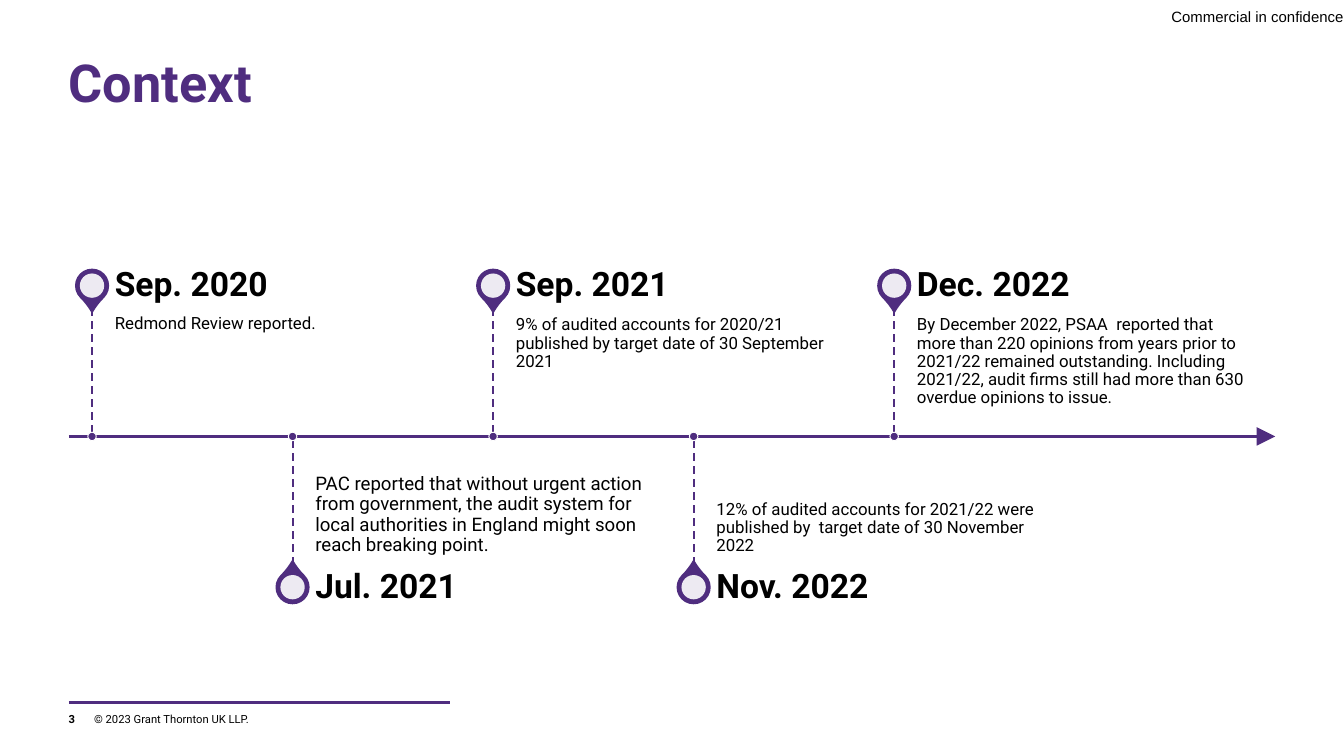
import pptx
import pptx.util
import pptx.dml.color
import pptx.enum.dml
import pptx.enum.shapes
import pptx.enum.text
import pptx.oxml.ns
import lxml.etree

Cm = pptx.util.Cm
Pt = pptx.util.Pt
Kind = pptx.enum.shapes.MSO_SHAPE
Anchor = pptx.enum.text.MSO_ANCHOR
qn = pptx.oxml.ns.qn

PURPLE = pptx.dml.color.RGBColor(0x4F, 0x2D, 0x7F)
WHITE = pptx.dml.color.RGBColor(0xFF, 0xFF, 0xFF)
BLACK = pptx.dml.color.RGBColor(0x00, 0x00, 0x00)

deck = pptx.Presentation()
deck.slide_width = Cm(25.4)
deck.slide_height = Cm(14.29)
slide = deck.slides.add_slide(deck.slide_layouts[6])
shapes = slide.shapes


def write(left, top, width, height, text, size, bold=False, color=BLACK,
          anchor=Anchor.TOP, pads=(0, 0, 0, 0), face="Roboto"):
    """Add a text box; pads are left, top, right, bottom in cm."""
    box = shapes.add_textbox(Cm(left), Cm(top), Cm(width), Cm(height))
    frame = box.text_frame
    frame.word_wrap = True
    frame.vertical_anchor = anchor
    frame.margin_left, frame.margin_top, frame.margin_right, frame.margin_bottom = map(Cm, pads)
    para = frame.paragraphs[0]
    para.text = text
    para.font.name = face
    para.font.size = Pt(size)
    para.font.bold = bold
    para.font.color.rgb = color
    return para


def rule(x1, y1, x2, y2, weight):
    """Add a straight purple line without a shadow."""
    line = shapes.add_connector(pptx.enum.shapes.MSO_CONNECTOR.STRAIGHT,
                                Cm(x1), Cm(y1), Cm(x2), Cm(y2))
    line.line.color.rgb = PURPLE
    line.line.width = Pt(weight)
    lxml.etree.SubElement(line._element.spPr, qn("a:effectLst"))
    return line


# Header and footer
rule(1.3, 13.28, 8.51, 13.28, 1.5)
write(1.78, 13.46, 10.95, 0.25, "© 2023 Grant Thornton UK LLP.", 6)
write(1.3, 13.46, 0.46, 0.25, "3", 6, bold=True)
note = write(21.44, 0, 3.96, 0.61, "Commercial in confidence", 8,
             anchor=Anchor.MIDDLE, face="Arial")
note.alignment = pptx.enum.text.PP_ALIGN.RIGHT

# Title
title = write(1.3, 1.09, 22.8, 2.2, "Context", 28, bold=True, color=PURPLE)
title.line_spacing = 0.9

# Time axis
AXIS = 8.25
axis = rule(1.3, AXIS, 24.1, AXIS, 1.5)
lxml.etree.SubElement(axis.line._get_or_add_ln(), qn("a:tailEnd"),
                      type="triangle", w="lg", len="lg")

# Events alternate above and below the axis: date, text, text size
events = [
    ("Sep. 2020", "Redmond Review reported.", 9),
    ("Jul. 2021", "PAC reported that without urgent action from government, "
     "the audit system for local authorities in England might soon reach "
     "breaking point.", 10),
    ("Sep. 2021", "9% of audited accounts for 2020/21 published by target date "
     "of 30 September 2021", 9),
    ("Nov. 2022", "12% of audited accounts for 2021/22 were published by  target "
     "date of 30 November 2022", 9),
    ("Dec. 2022", "By December 2022, PSAA  reported that more than 220 opinions "
     "from years prior to 2021/22 remained outstanding. Including 2021/22, "
     "audit firms still had more than 630 overdue opinions to issue.", 9),
]
FIRST, STEP = 1.74, 3.79
REACH = 2.42   # length of a stem and height of a text
HEAD = 0.86    # height of a date

for index, (date, text, size) in enumerate(events):
    mid = FIRST + index * STEP
    left = mid + 0.43
    above = index % 2 == 0
    if above:
        end, top, head, turn = AXIS - REACH, AXIS - REACH, AXIS - REACH - HEAD, 135
        anchor, pads = Anchor.TOP, (0, 0.15, 0.15, 0.23)
    else:
        end, top, head, turn = AXIS + REACH, AXIS, AXIS + REACH, 315
        anchor, pads = Anchor.BOTTOM, (0, 0.25, 0, 0.17)
    hub = head + HEAD / 2

    # Date and text
    body = write(left, top, 6.32, REACH, text, size, anchor=anchor, pads=pads)
    label = write(left, head, 6.32, HEAD, date, 18, bold=True,
                  anchor=Anchor.MIDDLE, pads=(0, 0, 0.3, 0))
    body.line_spacing = label.line_spacing = 0.9

    # Stem
    stem = rule(mid, end, mid, AXIS, 1)
    stem.line.dash_style = pptx.enum.dml.MSO_LINE.DASH

    # Pin, its inner disc and the dot on the axis
    marks = [
        (Kind.TEAR, hub, 0.61, PURPLE, PURPLE, 1),
        (Kind.OVAL, hub, 0.46, WHITE, None, 0),
        (Kind.OVAL, AXIS, 0.16, PURPLE, WHITE, 0.5),
    ]
    for kind, y, wide, fill, edge, weight in marks:
        mark = shapes.add_shape(kind, Cm(mid - wide / 2), Cm(y - wide / 2),
                                Cm(wide), Cm(wide))
        mark.shadow.inherit = False
        mark.fill.solid()
        mark.fill.fore_color.rgb = fill
        if edge is None:
            mark.line.fill.background()
            tint = mark._element.spPr.find(qn("a:solidFill"))[0]
            lxml.etree.SubElement(tint, qn("a:alpha"), val="90000")
        else:
            mark.line.color.rgb = edge
            mark.line.width = Pt(weight)
        if kind == Kind.TEAR:
            mark.adjustments[0] = 1.15
            mark.rotation = turn

deck.save("out.pptx")
